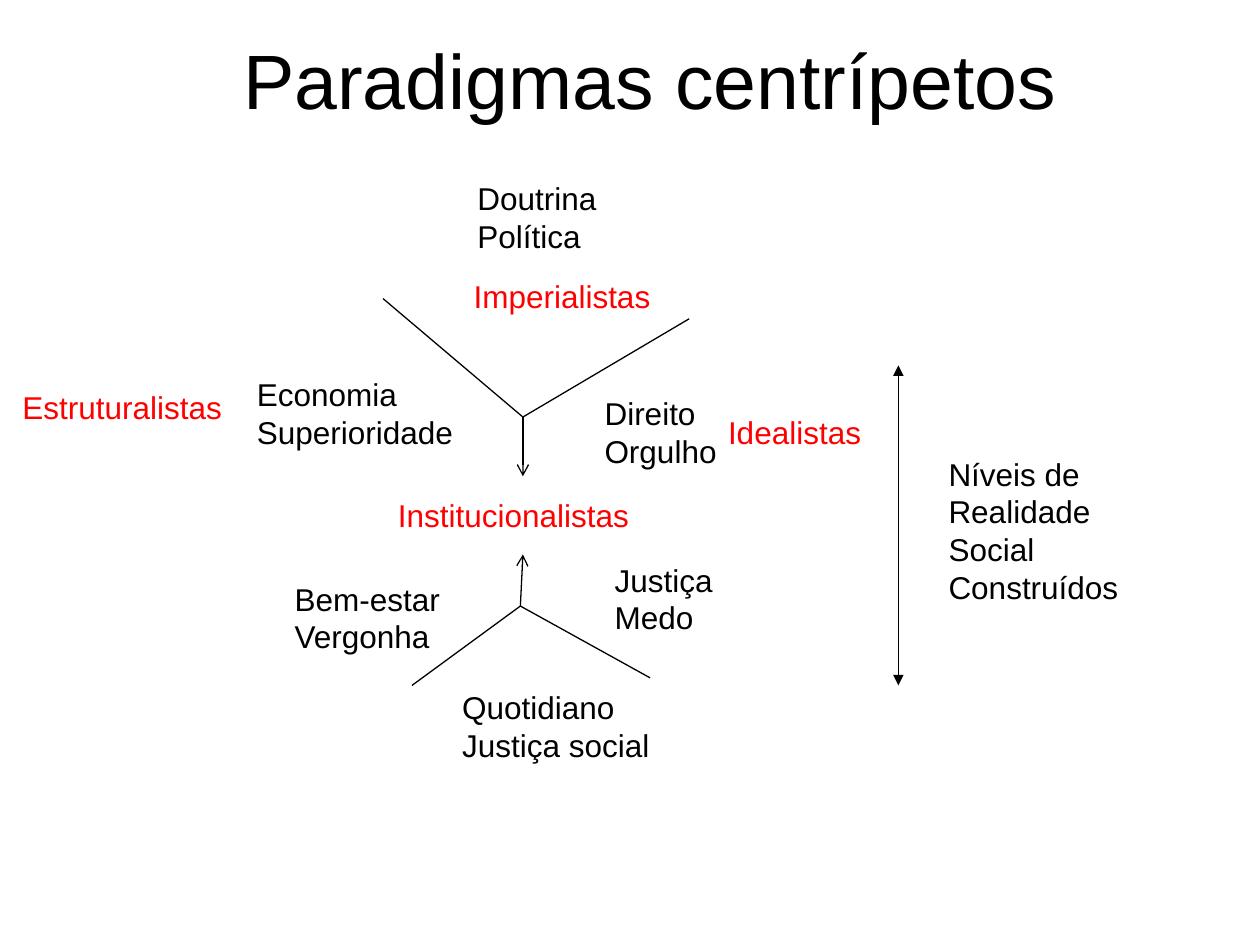
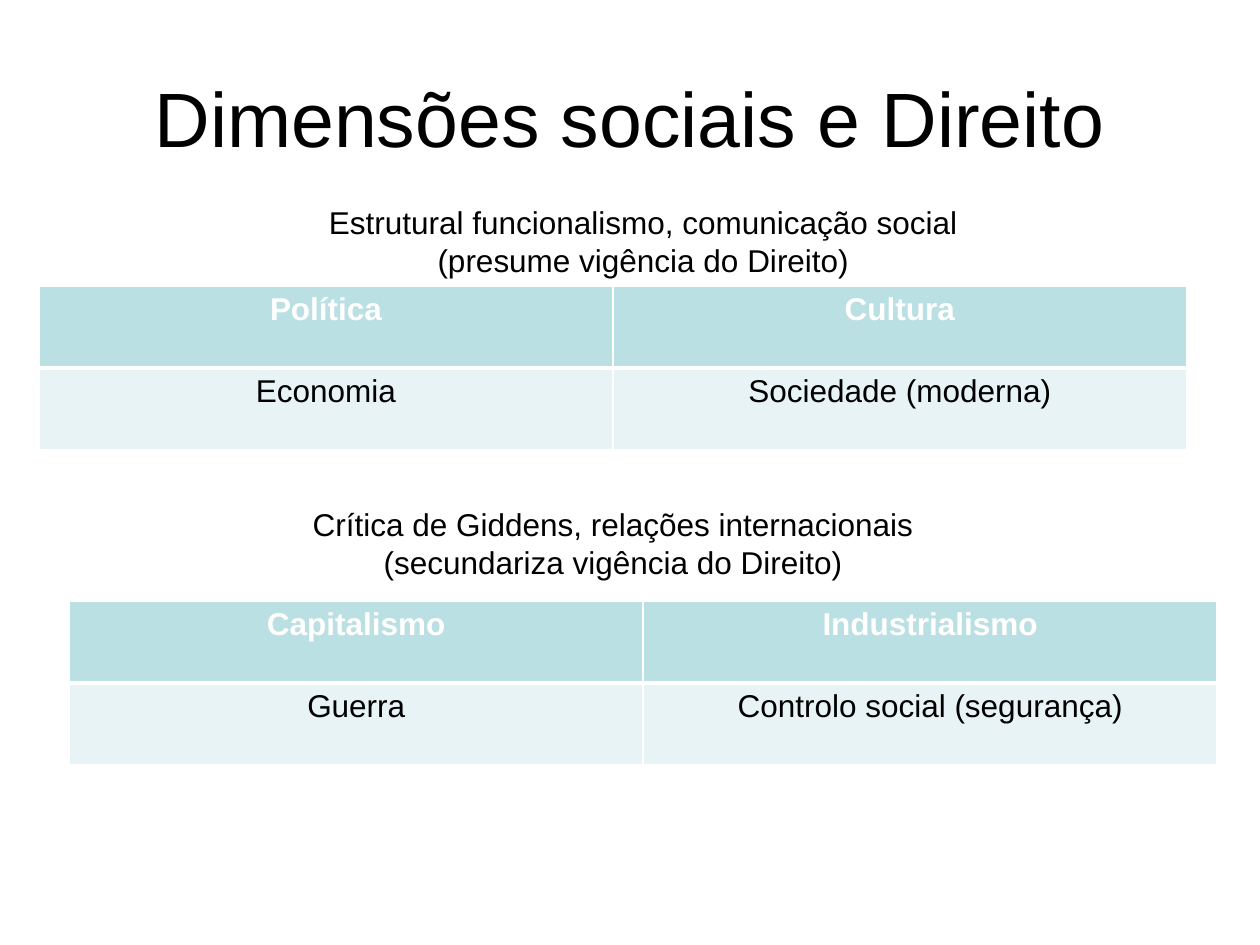
"""Builds two slides on centripetal paradigms and the social dimensions of law."""
from lxml import etree
from pptx import Presentation
from pptx import util as u
from pptx.dml.color import RGBColor
from pptx.enum import shapes, text
from pptx.oxml.ns import qn

BLACK = RGBColor(0x00, 0x00, 0x00)
RED = RGBColor(0xFF, 0x00, 0x00)
WHITE = RGBColor(0xFF, 0xFF, 0xFF)
HEADER_TEAL = RGBColor(0xBB, 0xE0, 0xE3)
BODY_TEAL = RGBColor(0xE7, 0xF3, 0xF4)
FONT = "Arial"
LEFT, CENTER = text.PP_ALIGN.LEFT, text.PP_ALIGN.CENTER

deck = Presentation()
deck.slide_width, deck.slide_height = u.Inches(10), u.Inches(7.5)
COL, ROW = deck.slide_width / 100, deck.slide_height / 75
TITLE_HEIGHT = 12.5


def style(paragraph, size=18, color=BLACK, align=LEFT, bold=False):
    paragraph.alignment = align
    paragraph.font.name, paragraph.font.size = FONT, u.Pt(size)
    paragraph.font.color.rgb, paragraph.font.bold = color, bold


def write(slide, lines, left, top, width, height, **look):
    box = slide.shapes.add_textbox(int(left * COL), int(top * ROW), int(width * COL), int(height * ROW))
    frame = box.text_frame
    frame.word_wrap = True
    frame.text = "\n".join(lines)
    for paragraph in frame.paragraphs:
        style(paragraph, **look)
    return frame


paradigms, dimensions = [deck.slides.add_slide(deck.slide_layouts[6]) for _ in range(2)]

for slide, title, left, top in [
    (paradigms, "Paradigmas centrípetos", 6.6, 0),
    (dimensions, "Dimensões sociais e Direito", 5, 3),
]:
    heading = write(slide, [title], left, top, 90, TITLE_HEIGHT, size=44, align=CENTER)
    heading.vertical_anchor = text.MSO_ANCHOR.MIDDLE

upper_joint, lower_joint = (41.5, 33.1), (41.3, 48.1)
for start, end, head, tail in [
    ((30.4, 23.7), upper_joint, None, None),
    (upper_joint, (54.7, 25.3), None, None),
    (lower_joint, (32.7, 54.4), None, None),
    (lower_joint, (51.6, 53.8), None, None),
    (upper_joint, (41.5, 37.8), None, "arrow"),
    (lower_joint, (41.5, 44), None, "arrow"),
    ((71.3, 29), (71.3, 54.4), "triangle", "triangle"),
]:
    line = paradigms.shapes.add_connector(
        shapes.MSO_CONNECTOR.STRAIGHT,
        int(start[0] * COL), int(start[1] * ROW), int(end[0] * COL), int(end[1] * ROW))
    line.line.color.rgb, line.line.width = BLACK, u.Pt(0.75)
    for tag, arrowhead in (("a:headEnd", head), ("a:tailEnd", tail)):
        if arrowhead:
            etree.SubElement(line.line._get_or_add_ln(), qn(tag), type=arrowhead)
    etree.SubElement(line._element.spPr, qn("a:effectLst"))

LINE_HEIGHT, PADDING = 3.03, 1
for lines, left, top, width, color in [
    (["Quotidiano", "Justiça social"], 35.7, 54.1, 17.7, BLACK),
    (["Direito", "Orgulho"], 47, 30.8, 12.4, BLACK),
    (["Economia", "Superioridade"], 19.4, 29.3, 17.7, BLACK),
    (["Doutrina", "Política"], 36.9, 13.7, 11.6, BLACK),
    (["Bem-estar", "Vergonha"], 22.4, 45.5, 15.2, BLACK),
    (["Justiça", "Medo"], 47.8, 44, 10.6, BLACK),
    (["Níveis de", "Realidade", "Social", "Construídos"], 74.3, 35.6, 15.6, BLACK),
    (["Imperialistas"], 36.6, 21.5, 16.2, RED),
    (["Institucionalistas"], 30.6, 38.9, 20.5, RED),
    (["Idealistas"], 56.8, 32.3, 12.7, RED),
    (["Estruturalistas"], 0.8, 30.3, 18, RED),
]:
    label = write(paradigms, lines, left, top, width, len(lines) * LINE_HEIGHT + PADDING, color=color)
    label.margin_right = 0

for caption, caption_left, caption_top, cells, left, top in [
    (["Estrutural funcionalismo, comunicação social", "(presume vigência do Direito)"], 15.1, 15.6,
     [["Política", "Cultura"], ["Economia", "Sociedade (moderna)"]], 3.1, 22.7),
    (["Crítica de Giddens, relações internacionais", "(secundariza vigência do Direito)"], 12.7, 39.6,
     [["Capitalismo", "Industrialismo"], ["Guerra", "Controlo social (segurança)"]], 5.5, 47.7),
]:
    write(dimensions, caption, caption_left, caption_top, 71.9, 7.1, align=CENTER)
    grid = dimensions.shapes.add_table(
        2, 2, int(left * COL), int(top * ROW), int(91.1 * COL), int(13 * ROW)).table
    grid.horz_banding = False
    for row, words in enumerate(cells):
        header = row == 0
        for column, word in enumerate(words):
            cell = grid.cell(row, column)
            cell.text = word
            style(cell.text_frame.paragraphs[0], color=WHITE if header else BLACK, align=CENTER, bold=header)
            divider = "B" if header else "T"
            for side in "LRTB":
                border = etree.SubElement(cell._tc.get_or_add_tcPr(), qn(f"a:ln{side}"),
                                          w=str(u.Pt(3 if side == divider else 1)))
                paint = etree.SubElement(border, qn("a:solidFill"))
                etree.SubElement(paint, qn("a:srgbClr"), val=str(WHITE))
            cell.fill.solid()
            cell.fill.fore_color.rgb = HEADER_TEAL if header else BODY_TEAL

deck.save("out.pptx")
